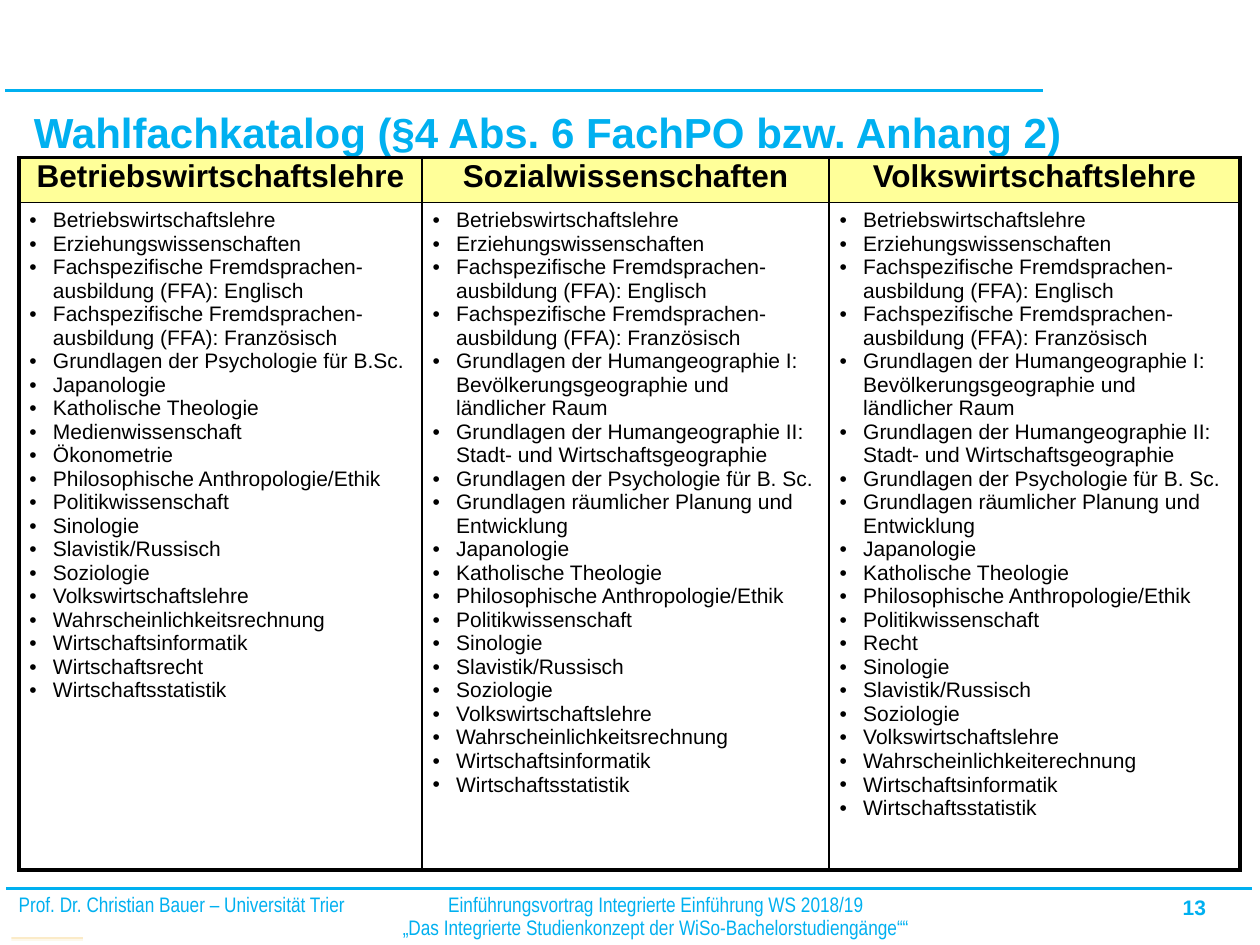
from lxml import etree
from pptx import Presentation
from pptx.dml.color import RGBColor
from pptx.enum.shapes import MSO_CONNECTOR, MSO_SHAPE
from pptx.enum.text import MSO_ANCHOR, MSO_AUTO_SIZE, PP_ALIGN
from pptx.oxml.ns import qn
from pptx.util import Pt

LEFT, MID, RIGHT = PP_ALIGN.LEFT, PP_ALIGN.CENTER, PP_ALIGN.RIGHT
TOP, BOTTOM = MSO_ANCHOR.TOP, MSO_ANCHOR.BOTTOM
FIXED = MSO_AUTO_SIZE.NONE
RECT = MSO_SHAPE.RECTANGLE
STRAIGHT = MSO_CONNECTOR.STRAIGHT

CYAN = RGBColor(0x00, 0xB0, 0xF0)
BLACK = RGBColor(0x00, 0x00, 0x00)
YELLOW = RGBColor(0xFF, 0xFF, 0x99)
GOLD = RGBColor(0xF5, 0xC8, 0x65)

THICK, THIN = 2.25, 1
INDENT = 13.5

TITLE = "Wahlfachkatalog (§4 Abs. 6 FachPO bzw. Anhang 2)"
AUTHOR = "Prof. Dr. Christian Bauer – Universität Trier"
EVENT = ("Einführungsvortrag Integrierte Einführung WS 2018/19\n"
         "„Das Integrierte Studienkonzept der WiSo-Bachelorstudiengänge““")
PAGE = "13"

BASE = [
    "Betriebswirtschaftslehre",
    "Erziehungswissenschaften",
    "Fachspezifische Fremdsprachen-ausbildung (FFA): Englisch",
    "Fachspezifische Fremdsprachen-ausbildung (FFA): Französisch",
]
SPACE = [
    "Grundlagen der Humangeographie I:\nBevölkerungsgeographie und ländlicher Raum",
    "Grundlagen der Humangeographie II: Stadt- und Wirtschaftsgeographie",
    "Grundlagen der Psychologie für B. Sc.",
    "Grundlagen räumlicher Planung und Entwicklung",
]
FAITH = ["Japanologie", "Katholische Theologie"]
ETHICS = ["Philosophische Anthropologie/Ethik", "Politikwissenschaft"]
SOCIAL = ["Sinologie", "Slavistik/Russisch", "Soziologie", "Volkswirtschaftslehre"]
CHANCE = "Wahrscheinlichkeitsrechnung"
INFO, STATS = "Wirtschaftsinformatik", "Wirtschaftsstatistik"

COURSES = {
    "Betriebswirtschaftslehre":
        BASE + ["Grundlagen der Psychologie für B.Sc."] + FAITH
        + ["Medienwissenschaft", "Ökonometrie"] + ETHICS + SOCIAL
        + [CHANCE, INFO, "Wirtschaftsrecht", STATS],
    "Sozialwissenschaften":
        BASE + SPACE + FAITH + ETHICS + SOCIAL + [CHANCE, INFO, STATS],
    "Volkswirtschaftslehre":
        BASE + SPACE + FAITH + ETHICS + ["Recht"] + SOCIAL
        + ["Wahrscheinlichkeiterechnung", INFO, STATS],
}


def write(para, text, size, color, bold=False, font="Arial", align=LEFT, lead=1.0):
    para.alignment = align
    para.line_spacing = lead
    para.space_before = para.space_after = Pt(0)
    for row, line in enumerate(text.split("\n")):
        if row:
            para.add_line_break()
        run = para.add_run()
        run.text = line
        run.font.name = font
        run.font.size = Pt(size)
        run.font.bold = bold
        run.font.color.rgb = color


def add_rule(slide, left, top, width):
    rule = slide.shapes.add_connector(
        STRAIGHT, Pt(left), Pt(top), Pt(left + width), Pt(top))
    rule.line.color.rgb = CYAN
    rule.line.width = Pt(1.5)
    etree.SubElement(rule._element.spPr, qn("a:effectLst"))


def add_label(slide, left, top, width, height, text, wrap=True, **style):
    box = slide.shapes.add_textbox(Pt(left), Pt(top), Pt(width), Pt(height))
    frame = box.text_frame
    frame.word_wrap = wrap
    write(frame.paragraphs[0], text, 12, CYAN, **style)


def add_title(slide, left, top, width, height):
    title = slide.shapes.title
    title.left, title.top = Pt(left), Pt(top)
    title.width, title.height = Pt(width), Pt(height)
    frame = title.text_frame
    frame.word_wrap = True
    frame.auto_size = FIXED
    frame.vertical_anchor = BOTTOM
    write(frame.paragraphs[0], TITLE, 24, CYAN, bold=True, lead=0.9)


def add_stripes(slide, left, top, width, gap):
    for row in range(3):
        stripe = slide.shapes.add_shape(
            RECT, Pt(left), Pt(top + row * gap), Pt(width), Pt(0.1))
        stripe.shadow.inherit = False
        stripe.fill.solid()
        stripe.fill.fore_color.rgb = GOLD
        stripe.line.fill.background()


def add_footer(slide, left, top, width, height):
    add_rule(slide, left, top, width)
    narrow = {"font": "Arial Narrow", "lead": 0.9}
    add_label(slide, left, top, 226, 20, AUTHOR, **narrow)
    add_label(slide, left + 219, top, 304.5, height, EVENT,
              wrap=False, align=MID, **narrow)
    add_label(slide, left + 602.6, top, 90, 24, PAGE, bold=True, align=RIGHT)


def set_edges(cell, **edges):
    props = cell._tc.get_or_add_tcPr()
    for side in "LRTB":
        edge = etree.SubElement(props, qn("a:ln" + side), w=str(Pt(edges[side])))
        fill = etree.SubElement(edge, qn("a:solidFill"))
        etree.SubElement(fill, qn("a:srgbClr"), val=str(BLACK))


def add_bullet(para):
    props = para._p.get_or_add_pPr()
    props.set("marL", str(Pt(INDENT)))
    props.set("indent", str(-Pt(INDENT)))
    etree.SubElement(props, qn("a:buFont"), typeface="Arial")
    etree.SubElement(props, qn("a:buChar"), char="•")


def fill_body(cell, items):
    frame = cell.text_frame
    for row, item in enumerate(items):
        para = frame.add_paragraph() if row else frame.paragraphs[0]
        write(para, item, 12, BLACK)
        add_bullet(para)
    cell.fill.background()


def fill_head(cell, name):
    write(cell.text_frame.paragraphs[0], name, 18, BLACK,
          bold=True, align=MID, lead=0.85)
    cell.fill.solid()
    cell.fill.fore_color.rgb = YELLOW


def add_catalog(slide, left, top, widths, heights):
    last = len(widths) - 1
    table = slide.shapes.add_table(
        len(heights), len(widths), Pt(left), Pt(top),
        Pt(sum(widths)), Pt(sum(heights))).table
    table.horz_banding = False
    for row, height in zip(table.rows, heights):
        row.height = Pt(height)
    for col, (name, items) in enumerate(COURSES.items()):
        table.columns[col].width = Pt(widths[col])
        head, body = table.cell(0, col), table.cell(1, col)
        west = THIN if col else THICK
        east = THICK if col == last else THIN
        set_edges(head, L=west, R=east, T=THICK, B=THIN)
        set_edges(body, L=west, R=east, T=THIN, B=THICK)
        for cell in (head, body):
            cell.margin_left = cell.margin_right = Pt(6)
            cell.margin_top = cell.margin_bottom = Pt(3.6)
            cell.vertical_anchor = TOP
        fill_head(head, name)
        fill_body(body, items)


def main():
    deck = Presentation()
    deck.slide_width, deck.slide_height = Pt(720), Pt(540)
    slide = deck.slides.add_slide(deck.slide_layouts[5])
    add_rule(slide, 2.9, 51.9, 593.3)
    add_stripes(slide, 6.5, 535.7, 41, 0.7)
    add_footer(slide, 3.6, 507.6, 712, 33)
    add_title(slide, 12.2, 27.4, 696, 66.2)
    add_catalog(slide, 10.8, 90, (230.4, 232.6, 234.7), (24, 356.4))
    deck.save("out.pptx")


if __name__ == "__main__":
    main()
